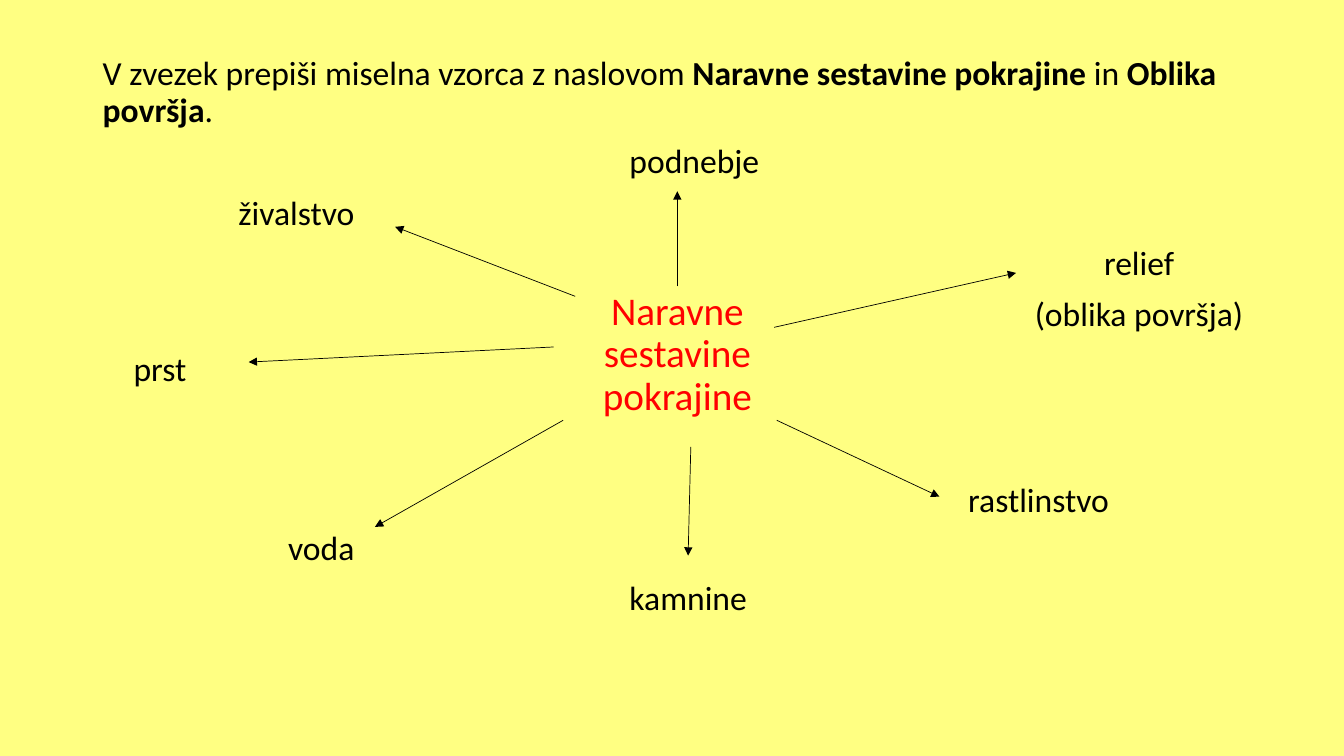
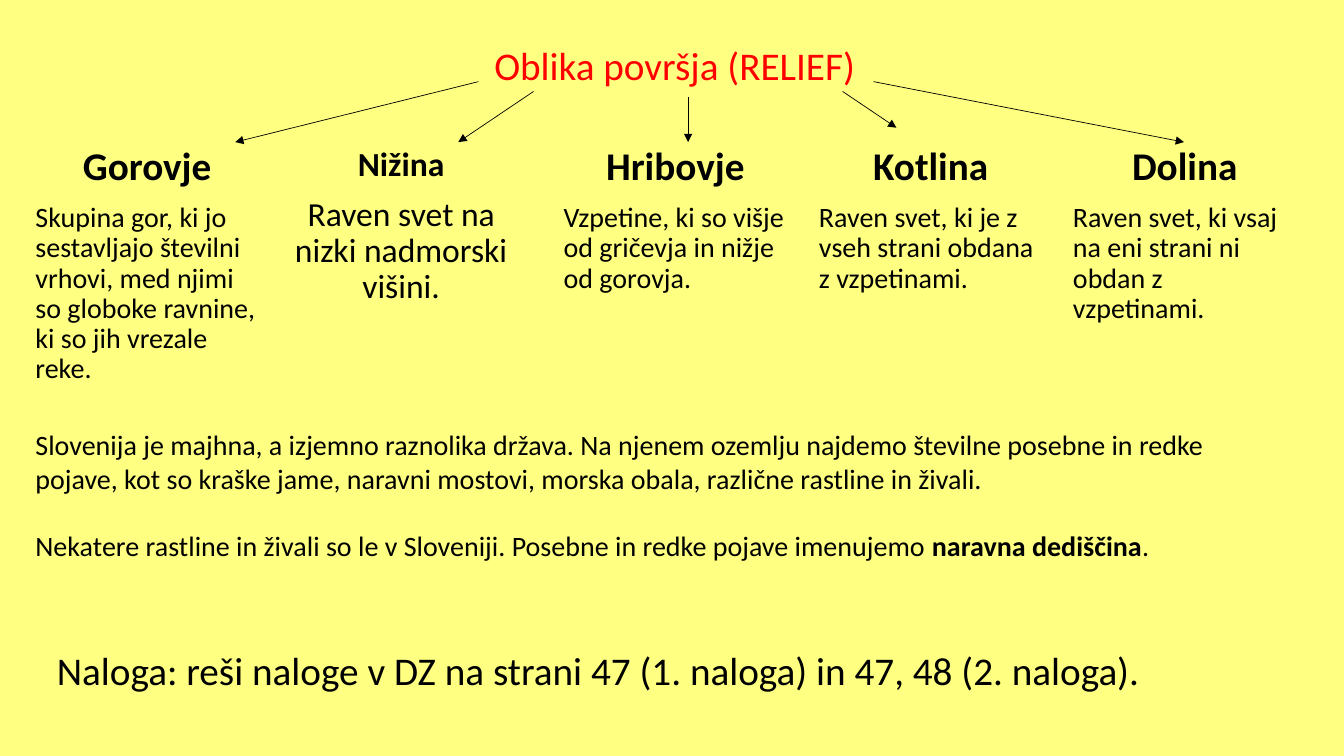
from dataclasses import dataclass
from typing import NamedTuple

from lxml import etree
from pptx import Presentation, util as u
from pptx.dml.color import RGBColor
from pptx.enum import shapes, text
from pptx.oxml.ns import qn

WIDTH, HEIGHT = u.Inches(13.333), u.Inches(7.5)
FONT = "Calibri"
PAPER, INK, ACCENT = "FFFF82", "000000", "FF0000"
SMALL, MEDIUM, LARGE = 20, 24, 28
LEFT, CENTER = text.PP_ALIGN.LEFT, text.PP_ALIGN.CENTER
TOP, MIDDLE = text.MSO_ANCHOR.TOP, text.MSO_ANCHOR.MIDDLE


class Frame(NamedTuple):
    """A rectangle in percent of the slide's width and height."""
    left: float
    top: float
    width: float
    height: float


class Arrow(NamedTuple):
    """Start and end points in percent of the slide's width and height."""
    x1: float
    y1: float
    x2: float
    y2: float


class Span(NamedTuple):
    text: str
    bold: bool = False


@dataclass(frozen=True)
class Para:
    spans: tuple[Span, ...]
    size: int = MEDIUM
    align: text.PP_ALIGN = LEFT
    color: str = INK
    spacing: float = 0.9
    before: int = 10


@dataclass(frozen=True)
class Landform:
    left: float
    name: str
    description: str
    name_size: int = LARGE
    description_size: int = SMALL
    description_align: text.PP_ALIGN = LEFT


INSTRUCTION = Para((
    Span("V zvezek prepiši miselna vzorca z naslovom "),
    Span("Naravne sestavine pokrajine ", True),
    Span("in "),
    Span("Oblika površja", True),
    Span("."),
))

COMPONENTS = [
    (Frame(46.1, 18.5, 15.8, 11.7), "podnebje"),
    (Frame(17, 25.3, 12.4, 13.9), "živalstvo"),
    (Frame(9.2, 45.9, 11.7, 11.7), "prst"),
    (Frame(46.1, 76.3, 14.3, 18.8), "kamnine"),
    (Frame(20.7, 69.7, 14.4, 14.4), "voda"),
    (Frame(71.3, 63.3, 14.4, 12.9), "rastlinstvo"),
]

COMPONENT_ARROWS = [
    Arrow(50.4, 37.9, 50.4, 25.3),
    Arrow(57.6, 43.3, 75.6, 36.1),
    Arrow(57.8, 55.6, 69.9, 65.7),
    Arrow(51.4, 59.1, 51.2, 73.5),
    Arrow(41.9, 55.6, 27.9, 69.7),
    Arrow(42.8, 39.2, 29.4, 30),
    Arrow(41.2, 45.9, 18.5, 47.9),
]

LANDFORM_TOP, LANDFORM_WIDTH, LANDFORM_HEIGHT = 18.8, 18.1, 67.3
LANDFORMS = [
    Landform(1.9, "Gorovje", "Skupina gor, ki jo sestavljajo številni vrhovi, "
             "med njimi so globoke ravnine, ki so jih vrezale reke."),
    Landform(20.8, "Nižina", "Raven svet na nizki nadmorski višini.",
             MEDIUM, MEDIUM, CENTER),
    Landform(41.2, "Hribovje",
             "Vzpetine, ki so višje od gričevja in nižje od gorovja."),
    Landform(60.2, "Kotlina",
             "Raven svet, ki je z vseh strani obdana z vzpetinami."),
    Landform(79.1, "Dolina",
             "Raven svet, ki vsaj na eni strani ni obdan z vzpetinami."),
]

LANDFORM_ARROWS = [
    Arrow(35.6, 10.8, 17.5, LANDFORM_TOP),
    Arrow(39.7, 12.1, 34.1, LANDFORM_TOP),
    Arrow(51.2, 12.8, 51.2, LANDFORM_TOP),
    Arrow(62.7, 12.1, 66.7, 16.9),
    Arrow(65, 10.8, 88.1, LANDFORM_TOP),
]

FACTS = [
    Para((Span("Slovenija je majhna, a izjemno raznolika država. Na njenem "
               "ozemlju najdemo številne posebne in redke pojave, kot so "
               "kraške jame, naravni mostovi, morska obala, različne rastline "
               "in živali."),), SMALL, spacing=1),
    Para((Span("Nekatere rastline in živali so le v Sloveniji. Posebne in "
               "redke pojave imenujemo "),
          Span("naravna dediščina", True),
          Span(".")), SMALL, spacing=1, before=24),
]


def rgb(value: str) -> RGBColor:
    return RGBColor.from_string(value)


def across(share: float) -> int:
    return round(WIDTH * share / 100)


def down(share: float) -> int:
    return round(HEIGHT * share / 100)


def plain(words: str, size: int = MEDIUM, align: text.PP_ALIGN = LEFT,
          color: str = INK, bold: bool = False) -> Para:
    """A paragraph with a single span."""
    return Para((Span(words, bold),), size, align, color)


def add_page(deck):
    page = deck.slides.add_slide(deck.slide_layouts[6])
    page.background.fill.solid()
    page.background.fill.fore_color.rgb = rgb(PAPER)
    return page


def add_text(page, frame: Frame, *paras: Para, anchor: text.MSO_ANCHOR = TOP) -> None:
    box = page.shapes.add_textbox(across(frame.left), down(frame.top),
                                  across(frame.width), down(frame.height))
    body = box.text_frame
    body.word_wrap = True
    body.vertical_anchor = anchor
    for index, para in enumerate(paras):
        line = body.add_paragraph() if index else body.paragraphs[0]
        line.alignment = para.align
        line.line_spacing = para.spacing
        if index:
            line.space_before = u.Pt(para.before)
        line.font.name = FONT
        line.font.size = u.Pt(para.size)
        line.font.color.rgb = rgb(para.color)
        for span in para.spans:
            run = line.add_run()
            run.text = span.text
            if span.bold:
                run.font.bold = True


def add_arrow(page, arrow: Arrow) -> None:
    line = page.shapes.add_connector(
        shapes.MSO_CONNECTOR.STRAIGHT, across(arrow.x1), down(arrow.y1),
        across(arrow.x2), down(arrow.y2))
    line.line.color.rgb = rgb(INK)
    line.line.width = u.Pt(0.5)
    properties = line._element.spPr
    etree.SubElement(properties.find(qn("a:ln")), qn("a:tailEnd"), type="triangle")
    etree.SubElement(properties, qn("a:effectLst"))


def add_components_page(deck) -> None:
    page = add_page(deck)
    add_text(page, Frame(6.9, 5.3, 87, 14), INSTRUCTION, anchor=MIDDLE)
    for frame, name in COMPONENTS:
        add_text(page, frame, plain(name))
    add_text(page, Frame(75.6, 32, 18.3, 17.3),
             plain("relief", align=CENTER), plain("(oblika površja)", align=CENTER))
    add_text(page, Frame(41.9, 37.9, 17, 27.7),
             plain("Naravne sestavine pokrajine", LARGE, CENTER, ACCENT))
    for arrow in COMPONENT_ARROWS:
        add_arrow(page, arrow)


def add_relief_page(deck) -> None:
    page = add_page(deck)
    add_text(page, Frame(1.9, 5.5, 96.6, 8),
             plain("Oblika površja (RELIEF)", LARGE, CENTER, ACCENT))
    for form in LANDFORMS:
        add_text(page,
                 Frame(form.left, LANDFORM_TOP, LANDFORM_WIDTH, LANDFORM_HEIGHT),
                 plain(form.name, form.name_size, CENTER, bold=True),
                 plain(form.description, form.description_size,
                       form.description_align))
    for arrow in LANDFORM_ARROWS:
        add_arrow(page, arrow)
    add_text(page, Frame(3.5, 85.6, 86.6, 8.9),
             plain("Naloga: reši naloge v DZ na strani 47 (1. naloga) "
                   "in 47, 48 (2. naloga).", LARGE))
    add_text(page, Frame(1.9, 55.9, 93.6, 19.3), *FACTS)


def main() -> None:
    deck = Presentation()
    deck.slide_width, deck.slide_height = WIDTH, HEIGHT
    add_components_page(deck)
    add_relief_page(deck)
    deck.save("out.pptx")


if __name__ == "__main__":
    main()
